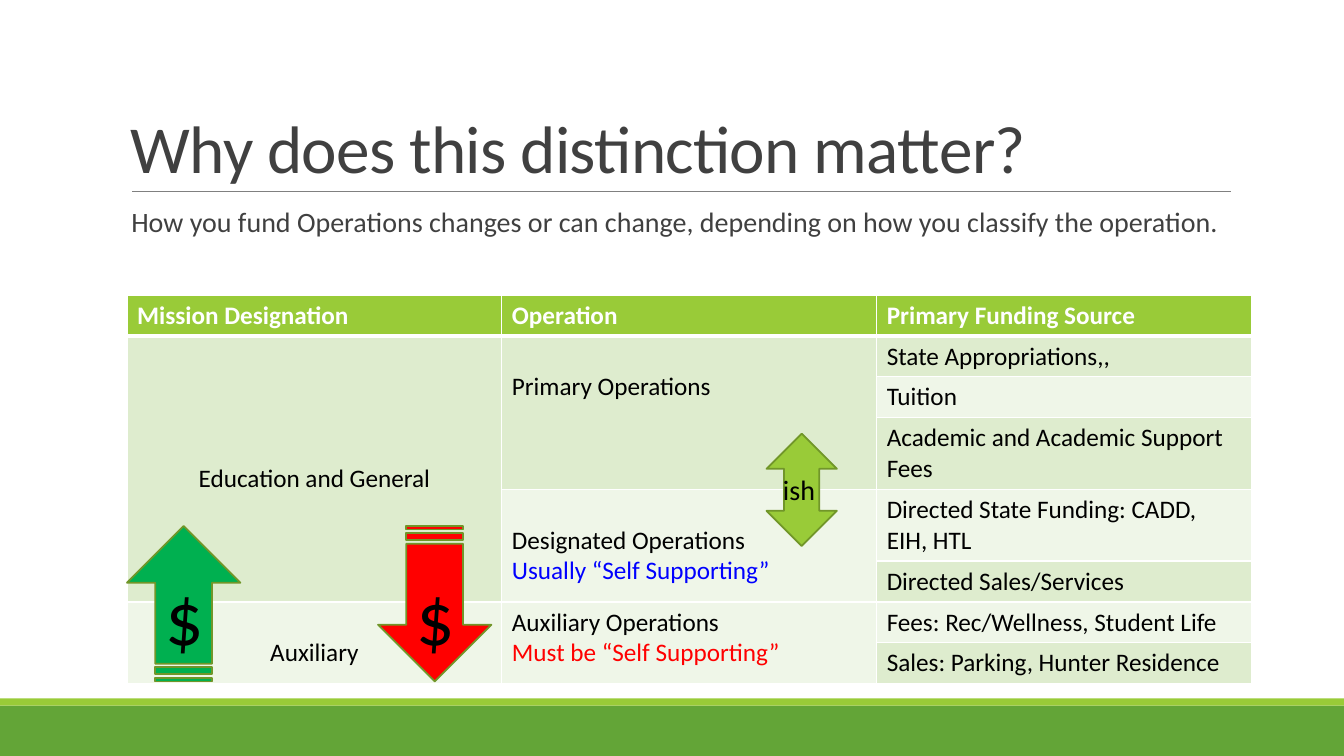
from lxml import etree
from pptx import Presentation
from pptx.dml.color import RGBColor
from pptx.enum.shapes import MSO_CONNECTOR, MSO_SHAPE as SHAPE
from pptx.enum.text import MSO_ANCHOR as ANCHOR, PP_ALIGN as ALIGN
from pptx.oxml.ns import qn
from pptx.util import Pt

FONT = "Calibri"
GREEN, LIME, OUTLINE = "63A537", "99CB38", "719629"
PALE, PALER = "DEECCE", "EFF6E8"
BLACK, WHITE, GREY = "000000", "FFFFFF", "404040"
LINE_HEIGHT = 29

HEADERS = ["Mission Designation", "Operation", "Primary Funding Source"]
SOURCES = [
    "State Appropriations,,",
    "Tuition",
    "Academic and Academic Support Fees",
    "Directed State Funding: CADD, EIH, HTL",
    "Directed Sales/Services",
    "Fees: Rec/Wellness, Student Life",
    "Sales: Parking, Hunter Residence",
]
# first row, column, rows spanned, lines skipped above, alignment, [(text, colour)]
GROUPS = [
    (1, 0, 5, 4, ALIGN.CENTER, [("Education and General", BLACK)]),
    (6, 0, 2, 1, ALIGN.CENTER, [("Auxiliary", BLACK)]),
    (1, 1, 3, 1, ALIGN.LEFT, [("Primary Operations", BLACK)]),
    (4, 1, 2, 1, ALIGN.LEFT, [("Designated Operations", BLACK),
                              ("Usually “Self Supporting”", "0000FF")]),
    (6, 1, 2, 0, ALIGN.LEFT, [("Auxiliary Operations", BLACK),
                              ("Must be “Self Supporting”", "FF0000")]),
]


def px(n):
    """Pixels to EMU, at 96 pixels to the inch."""
    return n * 9525


def rgb(color):
    return RGBColor.from_string(color)


def set_font(p, size, color, bold=False):
    f = p.font
    f.name, f.size, f.bold = FONT, Pt(size), bold
    f.color.rgb = rgb(color)


def place(sp, x, y, w, h):
    sp.left, sp.top, sp.width, sp.height = map(px, (x, y, w, h))


def add_filled(s, kind, x, y, w, h, fill, line=None):
    sp = s.shapes.add_shape(kind, px(x), px(y), px(w), px(h))
    sp.shadow.inherit = False
    sp.fill.solid()
    sp.fill.fore_color.rgb = rgb(fill)
    if line:
        sp.line.color.rgb = rgb(line)
        sp.line.width = Pt(1.25)
    else:
        sp.line.fill.background()
    return sp


def add_label(s, text, size, x, y, w, h):
    tb = s.shapes.add_textbox(px(x), px(y), px(w), px(h))
    tb.text_frame.word_wrap = False
    p = tb.text_frame.paragraphs[0]
    p.text, p.alignment = text, ALIGN.CENTER
    set_font(p, size, BLACK)


def add_footer_band(s, y, w, h):
    add_filled(s, SHAPE.RECTANGLE, 0, y, w, h, GREEN)
    add_filled(s, SHAPE.RECTANGLE, 0, y - 7, w, 7, LIME)


def add_heading(s, x, y, w, h):
    """Title standing on a thin rule."""
    title = s.shapes.title
    place(title, x, y, w, h)
    tf = title.text_frame
    tf.vertical_anchor = ANCHOR.BOTTOM
    p = tf.paragraphs[0]
    r = p.add_run()
    r.text = "Why does this distinction matter?"
    r.font._element.set("spc", "-50")
    p.alignment, p.line_spacing = ALIGN.LEFT, 0.85
    set_font(p, 48, GREY)
    rule_y = px(y + h - 1)
    rule = s.shapes.add_connector(MSO_CONNECTOR.STRAIGHT, px(x + 11), rule_y,
                                  px(x + w + 1), rule_y)
    rule.line.color.rgb = rgb("808080")
    rule.line.width = Pt(0.5)
    etree.SubElement(rule._element.spPr, qn("a:effectLst"))


def add_intro(s, x, y, w, h):
    body = s.placeholders[1]
    place(body, x, y, w, h)
    tf = body.text_frame
    tf.margin_left = tf.margin_right = 0
    p = tf.paragraphs[0]
    p.text = ("How you fund Operations changes or can change, "
              "depending on how you classify the operation.")
    p.line_spacing, p.space_before, p.space_after = 0.9, Pt(12), Pt(2)
    set_font(p, 20, GREY)
    pPr = p._p.get_or_add_pPr()
    pPr.set("marL", str(px(10)))
    pPr.set("indent", "0")
    no_bullet = etree.Element(qn("a:buNone"))
    pPr.find(qn("a:defRPr")).addprevious(no_bullet)


def set_borders(cell, bottom):
    tcPr = cell._tc.get_or_add_tcPr()
    for i, (side, width) in enumerate(zip("LRTB", (1, 1, 1, bottom))):
        ln = etree.Element(qn(f"a:ln{side}"), w=str(Pt(width)))
        fill = etree.SubElement(ln, qn("a:solidFill"))
        etree.SubElement(fill, qn("a:srgbClr"), val=WHITE)
        tcPr.insert(i, ln)


def fill_cell(cell, lines, align=ALIGN.LEFT, bold=False):
    tf = cell.text_frame
    for i, (text, color) in enumerate(lines):
        p = tf.add_paragraph() if i else tf.paragraphs[0]
        p.text, p.alignment = text, align
        set_font(p, 18, color, bold)


def add_funding_table(s, x, y, w):
    heights = [39, 39, 39, 68, 68, 39, 39, 39]
    tbl = s.shapes.add_table(len(heights), len(HEADERS), px(x), px(y), px(w),
                             px(sum(heights))).table
    for row, height in zip(tbl.rows, heights):
        row.height = px(height)
    for i, row in enumerate(tbl.rows):
        for cell in row.cells:
            cell.fill.solid()
            cell.fill.fore_color.rgb = rgb(LIME if i == 0 else PALE if i % 2 else PALER)
            set_borders(cell, 1 if i else 3)
    for col, text in enumerate(HEADERS):
        fill_cell(tbl.cell(0, col), [(text, WHITE)], bold=True)
    for row, text in enumerate(SOURCES, 1):
        fill_cell(tbl.cell(row, 2), [(text, BLACK)])
    for row, col, span, skipped, align, lines in GROUPS:
        cell = tbl.cell(row, col)
        cell.merge(tbl.cell(row + span - 1, col))
        cell.margin_top = px(5 + skipped * LINE_HEIGHT)
        fill_cell(cell, lines, align)


def add_dollar_arrow(s, x, y, w, h, fill, rotation):
    """Striped arrow turned upright inside the box, with a dollar sign."""
    shift = (h - w) // 2
    arrow = add_filled(s, SHAPE.STRIPED_RIGHT_ARROW, x - shift, y + shift, h, w,
                       fill, OUTLINE)
    arrow.rotation = rotation
    add_label(s, "$", 54, x + w // 2 - 28, y + 37, 57, 97)


def add_ish_arrow(s, x, y, w, h):
    add_filled(s, SHAPE.UP_DOWN_ARROW, x, y, w, h, LIME, OUTLINE)
    add_label(s, "ish", 20, x + 6, y + 32, 50, 42)


def main():
    prs = Presentation()
    prs.slide_width, prs.slide_height = px(1280), px(720)
    s = prs.slides.add_slide(prs.slide_layouts[1])
    add_footer_band(s, 672, 1280, 48)
    add_heading(s, 115, 30, 1056, 153)
    add_intro(s, 115, 194, 1056, 422)
    add_funding_table(s, 121, 281, 1071)
    add_dollar_arrow(s, 121, 501, 108, 148, "00B050", 270)
    add_dollar_arrow(s, 360, 501, 108, 148, "FF0000", 90)
    add_ish_arrow(s, 730, 413, 67, 107)
    prs.save("out.pptx")


if __name__ == "__main__":
    main()
